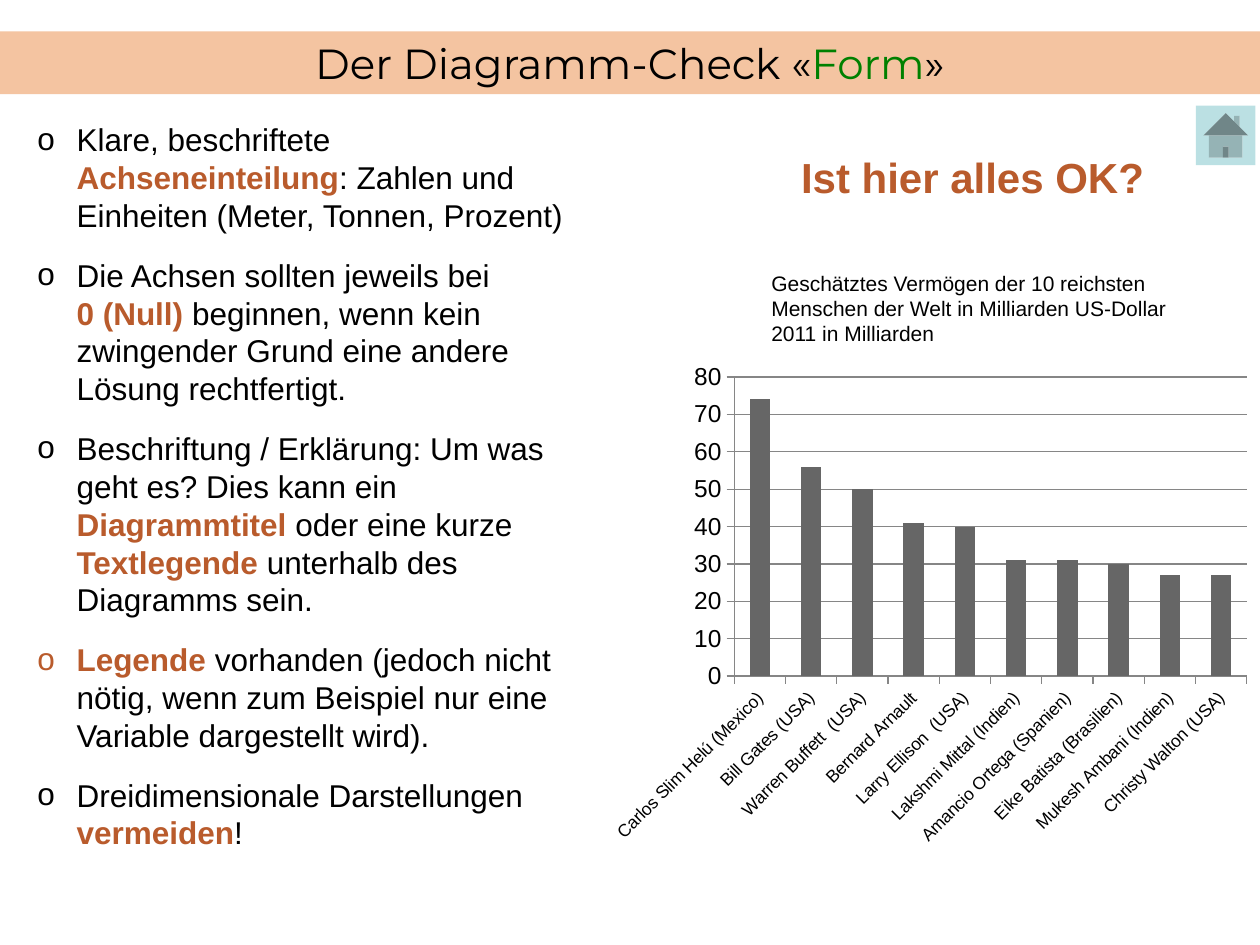
from lxml import etree
from pptx import Presentation
from pptx.chart.data import CategoryChartData
from pptx.dml.color import RGBColor
from pptx.enum.chart import XL_CHART_TYPE, XL_TICK_MARK
from pptx.enum.shapes import MSO_SHAPE
from pptx.enum.text import MSO_ANCHOR, PP_ALIGN
from pptx.oxml import parse_xml
from pptx.oxml.ns import nsdecls, qn
from pptx.util import Cm, Pt

COLUMN, OUTSIDE = XL_CHART_TYPE.COLUMN_CLUSTERED, XL_TICK_MARK.OUTSIDE
HOME, MIDDLE, CENTER = MSO_SHAPE.ACTION_BUTTON_HOME, MSO_ANCHOR.MIDDLE, PP_ALIGN.CENTER


class Theme:
    title_font, font = "Montserrat", "Arial"
    title_size, body_size, caption_size = Pt(24), Pt(18), Pt(12)
    value_size, name_size = Pt(14), Pt(10)
    black = RGBColor.from_string("000000")
    accent = RGBColor.from_string("B95B2C")
    green = RGBColor.from_string("008000")
    band = RGBColor.from_string("F4C4A1")
    button = RGBColor.from_string("BBE0E3")
    bar = RGBColor.from_string("666666")
    axis = RGBColor.from_string("868686")


# Text between asterisks is emphasised; a line end is a line break.
TITLE = "Der Diagramm-Check «*Form*»"
CHECKS = [
    "Klare, beschriftete *Achseneinteilung*: Zahlen und Einheiten (Meter, Tonnen, Prozent)",
    "Die Achsen sollten jeweils bei \n*0 (Null)* beginnen, wenn kein zwingender Grund "
    "eine andere Lösung rechtfertigt.",
    "Beschriftung / Erklärung: Um was geht es? Dies kann ein *Diagrammtitel* oder eine "
    "kurze *Textlegende* unterhalb des Diagramms sein.",
    "*Legende* vorhanden (jedoch nicht nötig, wenn zum Beispiel nur eine Variable "
    "dargestellt wird).",
    "Dreidimensionale Darstellungen *vermeiden*!",
]
QUESTION = "Ist hier alles OK?"
CAPTION = ("Geschätztes Vermögen der 10 reichsten Menschen der Welt in Milliarden "
           "US-Dollar 2011 in Milliarden")
FORTUNES = {
    "Carlos Slim Helú (Mexico)": 74,
    "Bill Gates (USA)": 56,
    "Warren Buffett  (USA)": 50,
    "Bernard Arnault": 41,
    "Larry Ellison  (USA)": 40,
    "Lakshmi Mittal (Indien)": 31,
    "Amancio Ortega (Spanien)": 31,
    "Eike Batista (Brasilien)": 30,
    "Mukesh Ambani (Indien)": 27,
    "Christy Walton (USA)": 27,
}
PLOT_AREA = {"x": 0.2, "y": 0.05, "w": 0.78, "h": 0.6}


def place(sp, left, top, width, height):
    sp.left, sp.top, sp.width, sp.height = Cm(left), Cm(top), Cm(width), Cm(height)


def style(font, name, size, color, bold=False):
    font.name, font.size, font.bold = name, size, bold
    font.color.rgb = color


def write_marked(p, text, color, bold):
    """Split text at asterisks into plain and emphasised runs."""
    for i, part in enumerate(text.split("*")):
        for j, line in enumerate(part.split("\n")):
            if j:
                p.add_line_break()
            if line:
                r = p.add_run()
                r.text = line
                r.font.color.rgb = color if i % 2 else Theme.black
                if i % 2 and bold:
                    r.font.bold = True


def add_title(s):
    sp = s.shapes.title
    place(sp, 0, 0.63, 25.4, 1.27)
    sp.fill.solid()
    sp.fill.fore_color.rgb = Theme.band
    sp.text_frame.vertical_anchor = MIDDLE
    p = sp.text_frame.paragraphs[0]
    p.alignment = CENTER
    style(p.font, Theme.title_font, Theme.title_size, Theme.black)
    write_marked(p, TITLE, Theme.green, bold=False)


def add_checks(s):
    sp = s.placeholders[1]
    place(sp, 0.5, 2.3, 11.4, 15.88)
    tf = sp.text_frame
    for i, text in enumerate(CHECKS):
        p = tf.add_paragraph() if i else tf.paragraphs[0]
        style(p.font, Theme.font, Theme.body_size, Theme.black)
        p.space_before, p.space_after = Pt(3.6), Pt(9)
        pPr = p._p.get_or_add_pPr()
        pPr.set("marL", str(Cm(0.79)))
        pPr.set("indent", str(-Cm(0.79)))
        bullet = etree.Element(qn("a:buChar"), char="o")
        pPr.insert_element_before(bullet, "a:tabLst", "a:defRPr", "a:extLst")
        write_marked(p, text, Theme.accent, bold=True)


def add_text(s, box, text, size, color, bold=False):
    tf = s.shapes.add_textbox(*map(Cm, box)).text_frame
    tf.word_wrap = True
    p = tf.paragraphs[0]
    p.text = text
    style(p.font, Theme.font, size, color, bold)


def add_home_button(s):
    sp = s.shapes.add_shape(HOME, Cm(24.11), Cm(2.13), Cm(1.2), Cm(1.2))
    sp.shadow.inherit = False
    sp.fill.solid()
    sp.fill.fore_color.rgb = Theme.button
    sp.line.fill.background()


def fix_plot_area(chart):
    sizes = "".join(f'<c:{k} val="{v}"/>' for k, v in PLOT_AREA.items())
    layout = parse_xml(
        f'<c:layout {nsdecls("c")}><c:manualLayout><c:layoutTarget val="inner"/>'
        f'<c:xMode val="edge"/><c:yMode val="edge"/>{sizes}</c:manualLayout></c:layout>')
    area = chart._chartSpace.chart.plotArea
    for old in area.findall(qn("c:layout")):
        area.remove(old)
    area.insert(0, layout)


def add_fortunes_chart(s):
    data = CategoryChartData()
    data.categories = list(FORTUNES)
    data.add_series("Series 1", list(FORTUNES.values()))
    chart = s.shapes.add_chart(COLUMN, Cm(12.15), Cm(7.1), Cm(13.25), Cm(10.05), data).chart
    chart.has_legend = chart.has_title = False
    style(chart.font, Theme.font, Theme.name_size, Theme.black)
    plot = chart.plots[0]
    plot.gap_width, plot.vary_by_categories = 150, False
    fill = plot.series[0].format.fill
    fill.solid()
    fill.fore_color.rgb = Theme.bar

    names, values = chart.category_axis, chart.value_axis
    for axis, size in ((names, Theme.name_size), (values, Theme.value_size)):
        axis.major_tick_mark = OUTSIDE
        axis.format.line.color.rgb = Theme.axis
        style(axis.tick_labels.font, Theme.font, size, Theme.black)
    names._element.find(qn("c:txPr")).find(qn("a:bodyPr")).set("rot", str(-45 * 60000))
    values.minimum_scale, values.maximum_scale, values.major_unit = 0, 80, 10
    values.has_major_gridlines = True
    values.major_gridlines.format.line.color.rgb = Theme.axis
    fix_plot_area(chart)


def main():
    prs = Presentation()
    prs.slide_width, prs.slide_height = Cm(25.4), Cm(19.05)
    s = prs.slides.add_slide(prs.slide_layouts[1])
    add_home_button(s)
    add_title(s)
    add_checks(s)
    add_fortunes_chart(s)
    add_text(s, (15.3, 5.33, 9, 1.8), CAPTION, Theme.caption_size, Theme.black)
    add_text(s, (15.9, 2.92, 7.6, 1.3), QUESTION, Theme.title_size, Theme.accent, bold=True)
    prs.save("out.pptx")


if __name__ == "__main__":
    main()
